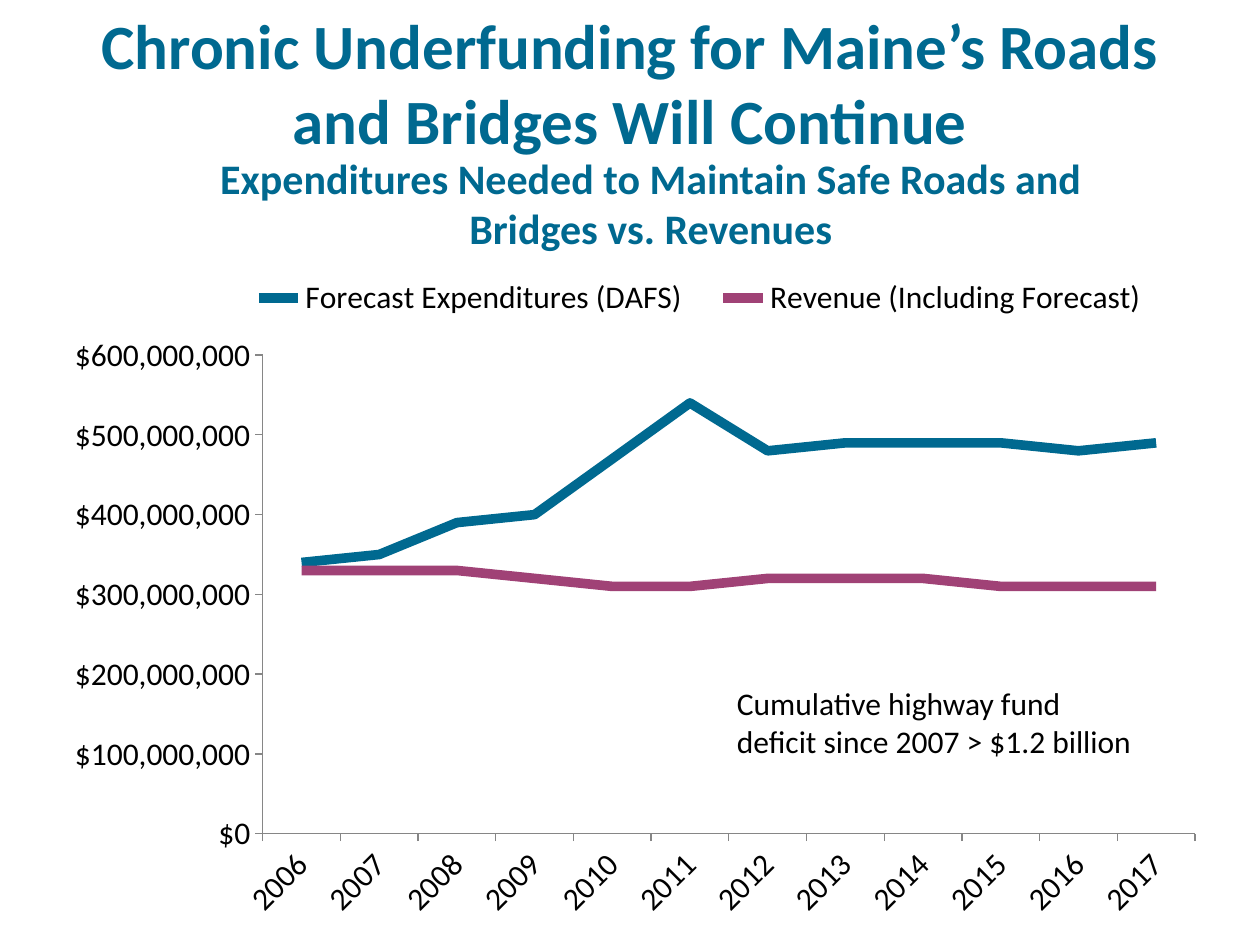
from pptx import Presentation, util as u
from pptx.chart.data import CategoryChartData
from pptx.dml.color import RGBColor
from pptx.enum import chart as ch, text
from pptx.oxml import parse_xml
from pptx.oxml.ns import nsdecls

COLORS = {"blue": "006990", "plum": "A04276", "ink": "000000", "axis": "868686"}
MILLION = 1_000_000
COSTS = [340, 350, 390, 400, 470, 540, 480, 490, 490, 490, 480, 490]
FUNDS = [330, 330, 330, 320, 310, 310, 320, 320, 320, 310, 310, 310]
SERIES = [
    ("Forecast Expenditures (DAFS)", COSTS, "blue"),
    ("Revenue (Including Forecast)", FUNDS, "plum"),
]


def layout(x, y, w, h, inner=False):
    """Return a manual chart layout, in fractions of the chart's size."""
    target = '<c:layoutTarget val="inner"/>' if inner else ""
    sizes = "".join(f'<c:{k} val="{v}"/>' for k, v in zip("xywh", (x, y, w, h)))
    return parse_xml(
        f'<c:layout {nsdecls("c")}><c:manualLayout>{target}'
        '<c:xMode val="edge"/><c:yMode val="edge"/>'
        f"{sizes}</c:manualLayout></c:layout>"
    )


class Deck:
    """Holds the style and the slide being filled."""

    def __init__(self, slide, face="Calibri"):
        self.slide = slide
        self.face = face

    def rgb(self, name):
        return RGBColor.from_string(COLORS[name])

    def style(self, font, size, color="ink", bold=False):
        font.name = self.face
        font.size = u.Pt(size)
        font.bold = bold
        font.color.rgb = self.rgb(color)

    def label(self, words, box, size, color="ink", bold=False, align=None):
        frame = self.slide.shapes.add_textbox(*map(u.Inches, box)).text_frame
        frame.word_wrap = True
        para = frame.paragraphs[0]
        para.text = words
        para.alignment = align
        self.style(para.font, size, color, bold)

    def axis(self, axis, size):
        axis.has_major_gridlines = False
        axis.major_tick_mark = ch.XL_TICK_MARK.OUTSIDE
        axis.minor_tick_mark = ch.XL_TICK_MARK.NONE
        axis.format.line.color.rgb = self.rgb("axis")
        axis.format.line.width = u.Pt(0.75)
        self.style(axis.tick_labels.font, size)

    def chart(self, years, series, box, size):
        data = CategoryChartData(number_format='"$"#,##0')
        data.categories = [str(year) for year in years]
        for name, vals, _ in series:
            data.add_series(name, [val * MILLION for val in vals])
        chart = self.slide.shapes.add_chart(
            ch.XL_CHART_TYPE.LINE, *map(u.Inches, box), data
        ).chart
        chart.has_title = False
        self.style(chart.font, 10)

        plot = chart.plots[0]
        plot.vary_by_categories = False
        for line, (_, _, color) in zip(plot.series, series):
            line.smooth = False
            line.marker.style = ch.XL_MARKER_STYLE.NONE
            line.format.line.color.rgb = self.rgb(color)
            line.format.line.width = u.Pt(5.5)

        for axis in (chart.category_axis, chart.value_axis):
            self.axis(axis, size)
        chart.element.xpath(".//c:catAx/c:txPr/a:bodyPr")[0].set("rot", "-2700000")
        scale = chart.value_axis
        scale.minimum_scale, scale.maximum_scale = 0, 600 * MILLION
        scale.major_unit = 100 * MILLION
        scale.tick_labels.number_format = '"$"#,##0'
        scale.tick_labels.number_format_is_linked = False

        chart.has_legend = True
        chart.legend.position = ch.XL_LEGEND_POSITION.TOP
        chart.legend.include_in_layout = False
        self.style(chart.legend.font, size)
        for old in chart.element.xpath(".//c:plotArea/c:layout | .//c:legend/c:layout"):
            old.getparent().remove(old)
        area = chart.element.xpath(".//c:plotArea")[0]
        area.insert(0, layout(0.18, 0.14, 0.8, 0.71, inner=True))
        spot = chart.element.xpath(".//c:legend/c:legendPos")[0]
        spot.addnext(layout(0.15, 0.01, 0.81, 0.09))


def main():
    prs = Presentation()
    prs.slide_width, prs.slide_height = u.Inches(10), u.Inches(7.5)
    deck = Deck(prs.slides.add_slide(prs.slide_layouts[6]))
    center = text.PP_ALIGN.CENTER
    deck.label("Chronic Underfunding for Maine’s Roads and Bridges Will Continue",
               (0.48, 0, 9.04, 0.71), 36, "blue", True, center)
    deck.label("Expenditures Needed to Maintain Safe Roads and Bridges vs. Revenues",
               (1.25, 1.16, 7.83, 0.91), 24, "blue", True, center)
    deck.chart(range(2006, 2018), SERIES, (0.42, 2.07, 9.25, 5.35), 18)
    deck.label("Cumulative highway fund deficit since 2007 > $1.2 billion",
               (5.75, 5.38, 3.42, 0.71), 18)
    prs.save("out.pptx")


if __name__ == "__main__":
    main()
